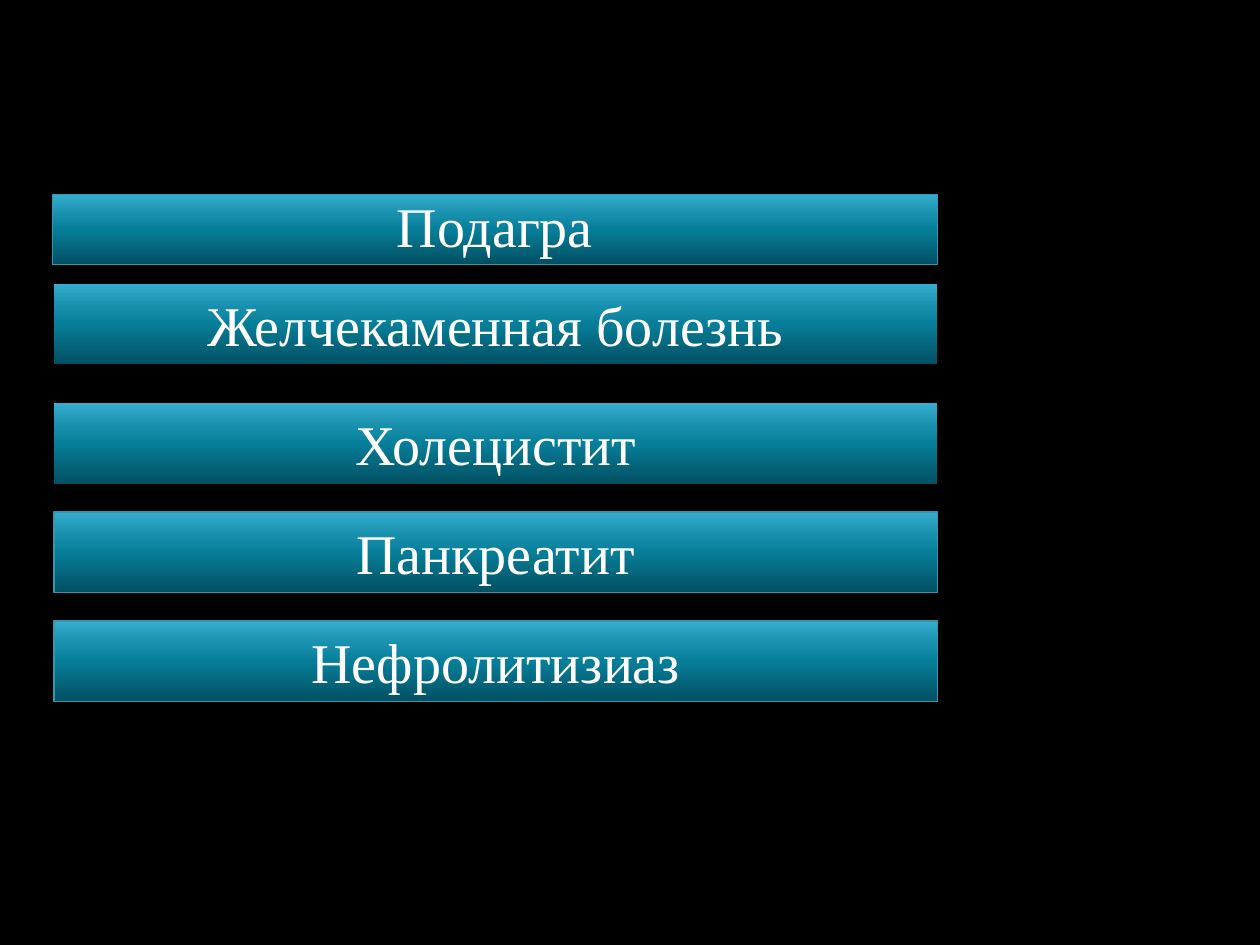
from copy import deepcopy

from pptx import Presentation
from pptx.dml.color import RGBColor
from pptx.enum.shapes import MSO_SHAPE as Shape
from pptx.enum.text import MSO_ANCHOR as Anchor, PP_ALIGN as Align
from pptx.util import Cm, Pt

COLORS = {
    "background": "000000",
    "text": "FFFFFF",
    "border": "3497AE",
    "deep": "015062",
    "mid": "077E99",
    "bright": "178EAB",
    "light": "35ADCE",
}
GRADIENT = [(0, "deep"), (0.5, "mid"), (0.7, "bright"), (1, "light")]


def color(name):
    return RGBColor.from_string(COLORS[name])


def write(frame, text, size=32, font="Times New Roman", ink="text",
          align=Align.CENTER, spacing=None):
    paragraph = frame.paragraphs[0]
    paragraph.alignment = align
    if spacing:
        paragraph.line_spacing = spacing
    run = paragraph.add_run()
    run.text = text
    run.font.size = Pt(size)
    run.font.name = font
    run.font.color.rgb = color(ink)


class DiseaseSlide:
    def __init__(self, deck):
        self.slide = deck.slides.add_slide(deck.slide_layouts[6])
        backdrop = self.slide.background.fill
        backdrop.solid()
        backdrop.fore_color.rgb = color("background")

    def paint(self, fill):
        """Vertical gradient, dark at the bottom and light at the top."""
        fill.gradient()
        fill.gradient_angle = 90
        stop_list = fill.gradient_stops[0]._gs.getparent()
        for _ in range(len(GRADIENT) - len(stop_list)):
            stop_list.append(deepcopy(stop_list[0]))
        for stop, (position, name) in zip(fill.gradient_stops, GRADIENT):
            stop.position = position
            stop.color.rgb = color(name)

    def bar(self, text, left, top, width, height, bordered=True,
            inset_x=0.25, inset_top=0.13, inset_bottom=0.13, spacing=None):
        bar = self.slide.shapes.add_shape(
            Shape.RECTANGLE, Cm(left), Cm(top), Cm(width), Cm(height))
        bar.shadow.inherit = False
        self.paint(bar.fill)
        if bordered:
            bar.line.color.rgb = color("border")
            bar.line.width = Pt(0.75)
        else:
            bar.line.fill.background()
        frame = bar.text_frame
        frame.word_wrap = True
        frame.vertical_anchor = Anchor.MIDDLE
        frame.margin_left = frame.margin_right = Cm(inset_x)
        frame.margin_top, frame.margin_bottom = Cm(inset_top), Cm(inset_bottom)
        write(frame, text, spacing=spacing)


def main():
    deck = Presentation()
    deck.slide_width, deck.slide_height = Cm(25.4), Cm(19.05)
    diseases = DiseaseSlide(deck)

    # Leading bar
    diseases.bar("Подагра", 1.06, 3.92, 17.84, 1.41,
                 inset_x=0, inset_top=0, inset_bottom=0, spacing=0.9)

    # Other diseases: text, top, border
    for text, top, bordered in [
        ("Желчекаменная болезнь", 5.72, False),
        ("Холецистит", 8.13, False),
        ("Панкреатит", 10.32, True),
        ("Нефролитизиаз", 12.52, True),
    ]:
        diseases.bar(text, 1.09, top, 17.81, 1.62, bordered)

    deck.save("out.pptx")


if __name__ == "__main__":
    main()
